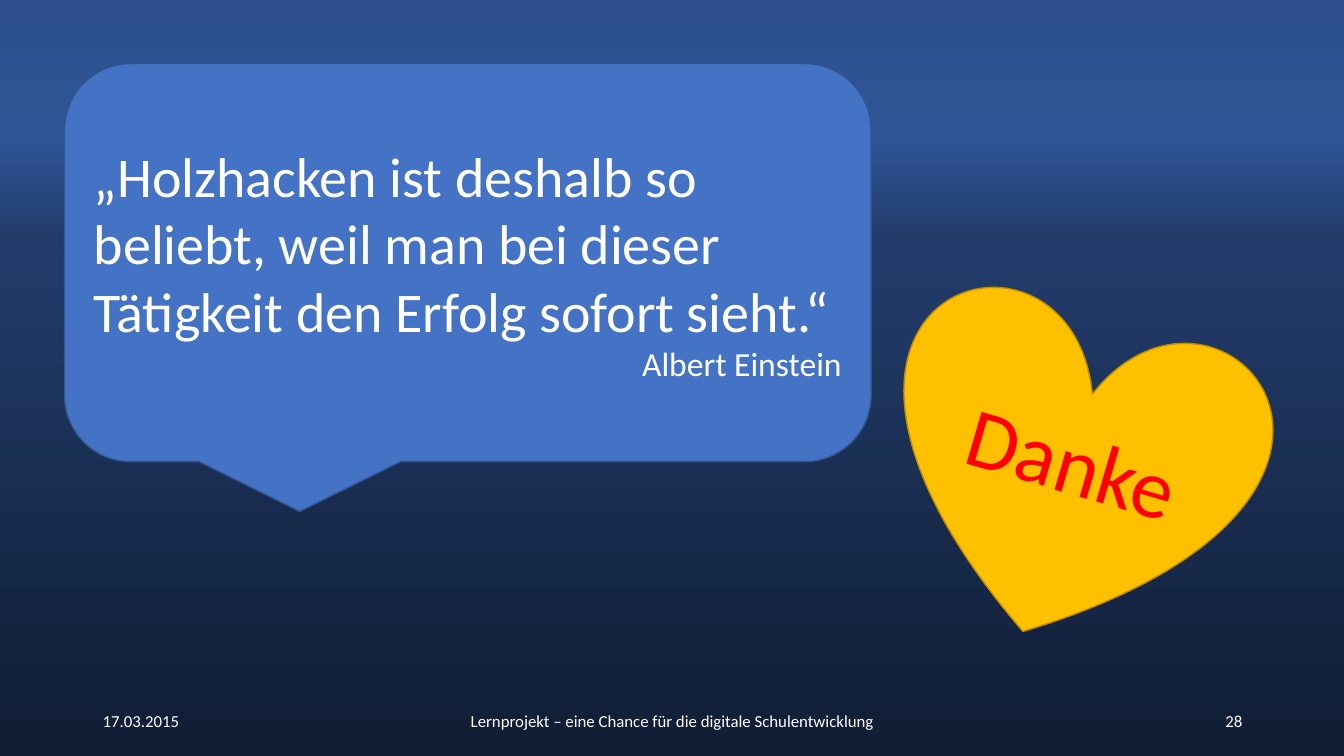
from copy import deepcopy

from pptx import Presentation
from pptx.dml.color import RGBColor
from pptx.enum.shapes import MSO_SHAPE
from pptx.enum.text import MSO_ANCHOR, PP_ALIGN
from pptx.oxml.ns import qn
from pptx.util import Inches, Pt

CALLOUT = MSO_SHAPE.ROUNDED_RECTANGULAR_CALLOUT
HEART = MSO_SHAPE.HEART
MIDDLE = MSO_ANCHOR.MIDDLE
LEFT, CENTER, RIGHT = PP_ALIGN.LEFT, PP_ALIGN.CENTER, PP_ALIGN.RIGHT

FONT = "Calibri"
WHITE = "FFFFFF"
BACKGROUND_STOPS = [(0, "101D34"), (0.69, "223D6C"), (0.82, "2F5597"), (1, "2C4F8C")]


def color(hex_text):
    return RGBColor.from_string(hex_text)


def write(shape, lines):
    """Fill a shape with paragraphs given as (text, size, colour, alignment)."""
    frame = shape.text_frame
    frame.word_wrap = True
    frame.vertical_anchor = MIDDLE
    for index, (text, size, hex_text, alignment) in enumerate(lines):
        para = frame.add_paragraph() if index else frame.paragraphs[0]
        para.text = text
        para.alignment = alignment
        font = para.runs[0].font
        font.name = FONT
        font.size = Pt(size)
        font.color.rgb = color(hex_text)


def add_bubble(page, kind, box, fill, outline, lines):
    shape = page.shapes.add_shape(kind, *map(Inches, box))
    shape.shadow.inherit = False
    shape.fill.solid()
    shape.fill.fore_color.rgb = color(fill)
    shape.line.color.rgb = color(outline)
    shape.line.width = Pt(1)
    write(shape, lines)
    return shape


def paint_background(page):
    fill = page.background.fill
    fill.gradient()
    fill.gradient_angle = 90
    stop_list = next(page.element.iter(qn("a:gsLst")))
    while len(stop_list) < len(BACKGROUND_STOPS):
        stop_list.append(deepcopy(stop_list[0]))
    for stop, (position, hex_text) in zip(fill.gradient_stops, BACKGROUND_STOPS):
        stop.position = position
        stop.color.rgb = color(hex_text)


def add_footer(page, box):
    """Place date, title and page number at the left, centre and right of the box."""
    left, top, width, height = box
    side, middle = 3, 4.5
    parts = [
        ("17.03.2015", 0, side, LEFT),
        ("Lernprojekt – eine Chance für die digitale Schulentwicklung",
         (width - middle) / 2, middle, CENTER),
        ("28", width - side, side, RIGHT),
    ]
    for text, offset, part_width, alignment in parts:
        part_box = (left + offset, top, part_width, height)
        shape = page.shapes.add_textbox(*map(Inches, part_box))
        write(shape, [(text, 12, WHITE, alignment)])


def add_quote(page, box):
    add_bubble(page, CALLOUT, box, "4472C4", "325491", [
        ("„Holzhacken ist deshalb so beliebt, weil man bei dieser "
         "Tätigkeit den Erfolg sofort sieht.“", 40, WHITE, LEFT),
        ("Albert Einstein", 24, WHITE, RIGHT),
    ])


def add_thanks(page, box):
    heart = add_bubble(page, HEART, box, "FFC000", "BD8E00",
                       [("Danke", 60, "FF0000", CENTER)])
    heart.rotation = 16.3


def main():
    deck = Presentation()
    deck.slide_width = Inches(13.33)
    deck.slide_height = Inches(7.5)
    page = deck.slides.add_slide(deck.slide_layouts[6])
    paint_background(page)
    add_footer(page, (0.92, 6.95, 11.5, 0.4))
    add_quote(page, (0.64, 0.63, 8, 3.95))
    add_thanks(page, (8.76, 3.06, 3.69, 3.27))
    deck.save("out.pptx")


if __name__ == "__main__":
    main()
